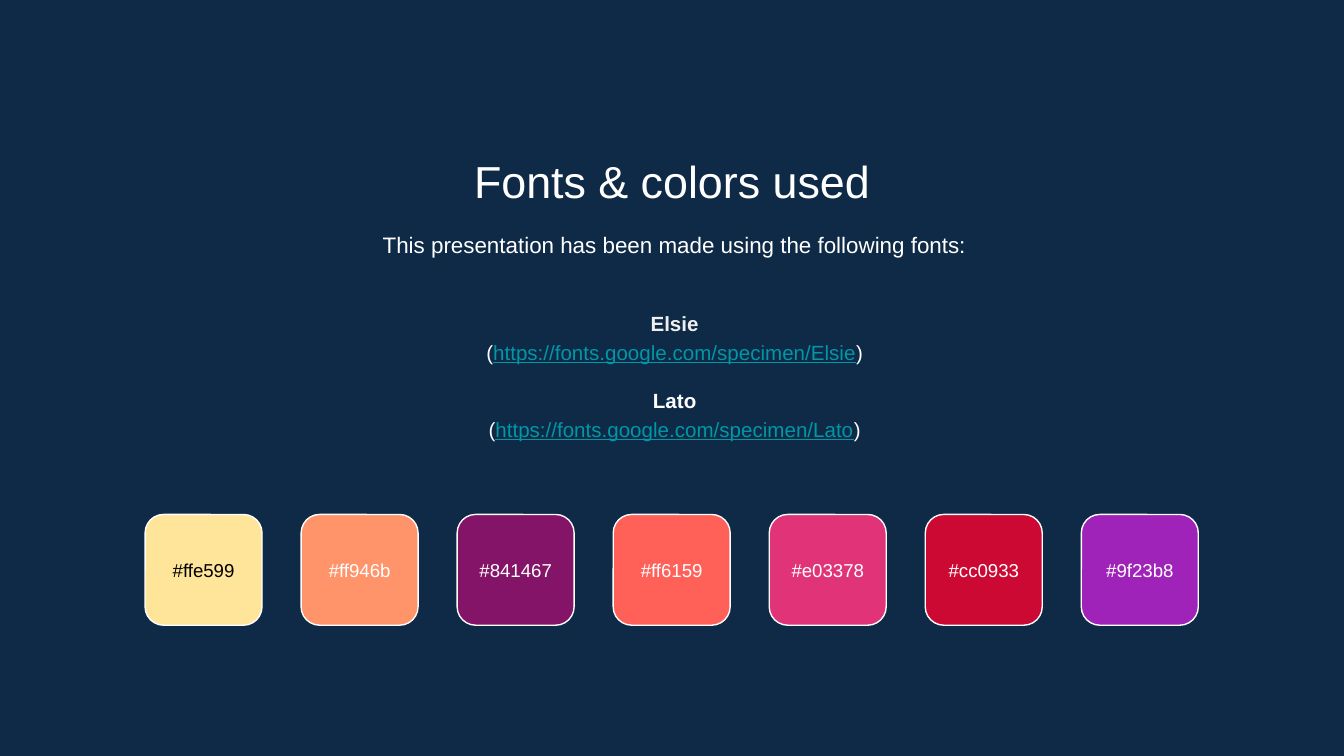
from pptx import Presentation
from pptx.dml.color import RGBColor
from pptx.enum.shapes import MSO_SHAPE as Shape
from pptx.enum.text import MSO_ANCHOR as Anchor, PP_ALIGN as Align
from pptx.util import Inches, Pt

NAVY = RGBColor(0x0E, 0x2A, 0x47)
WHITE = RGBColor(0xFF, 0xFF, 0xFF)
BLACK = RGBColor(0x00, 0x00, 0x00)
LIGHT_GRAY = RGBColor(0xEF, 0xEF, 0xEF)
TEAL = RGBColor(0x00, 0x97, 0xA7)
YELLOW = RGBColor(0xFF, 0xE5, 0x99)
ORANGE = RGBColor(0xFF, 0x94, 0x6B)
PLUM = RGBColor(0x84, 0x14, 0x67)
CORAL = RGBColor(0xFF, 0x61, 0x59)
PINK = RGBColor(0xE0, 0x33, 0x78)
CRIMSON = RGBColor(0xCC, 0x09, 0x33)
VIOLET = RGBColor(0x9F, 0x23, 0xB8)

PALETTE = [YELLOW, ORANGE, PLUM, CORAL, PINK, CRIMSON, VIOLET]
FONTS = [("Elsie", LIGHT_GRAY), ("Lato", WHITE)]


class FontsAndColorsSlide:
    """Draws styled elements on a slide divided into 100 columns and 100 rows."""

    font_name = "Arial"
    inset = Inches(0.1)

    def __init__(self, presentation):
        self.column = presentation.slide_width / 100
        self.row = presentation.slide_height / 100
        self.slide = presentation.slides.add_slide(presentation.slide_layouts[6])
        self.slide.background.fill.solid()
        self.slide.background.fill.fore_color.rgb = NAVY

    def place(self, left, top, width, height):
        return (round(left * self.column), round(top * self.row),
                round(width * self.column), round(height * self.row))

    def format_font(self, font, size, color, bold=False, underline=False):
        font.name = self.font_name
        font.size = Pt(size)
        font.color.rgb = color
        font.bold = bold
        font.underline = underline

    def text_box(self, *area, anchor=Anchor.TOP):
        text_frame = self.slide.shapes.add_textbox(*self.place(*area)).text_frame
        text_frame.word_wrap = True
        text_frame.vertical_anchor = anchor
        text_frame.margin_left = text_frame.margin_right = self.inset
        text_frame.margin_top = text_frame.margin_bottom = self.inset
        return text_frame

    def line(self, text, size, *area, spacing=1.0):
        text_frame = self.text_box(*area)
        text_frame.text = text
        paragraph = text_frame.paragraphs[0]
        paragraph.alignment = Align.CENTER
        paragraph.line_spacing = spacing
        self.format_font(paragraph.runs[0].font, size, WHITE)

    def font_list(self, fonts, size, gap, *area):
        text_frame = self.text_box(*area, anchor=Anchor.MIDDLE)
        for index, (name, color) in enumerate(fonts):
            heading = text_frame.add_paragraph() if index else text_frame.paragraphs[0]
            heading.text = name
            self.format_font(heading.runs[0].font, size, color, bold=True)
            if index:
                heading.space_before = Pt(gap)
            address = text_frame.add_paragraph()
            link = f"https://fonts.google.com/specimen/{name}"
            for text, tint in (("(", WHITE), (link, TEAL), (")", WHITE)):
                run = address.add_run()
                run.text = text
                self.format_font(run.font, size, tint, underline=text == link)
        for paragraph in text_frame.paragraphs:
            paragraph.alignment = Align.CENTER
            paragraph.line_spacing = 1.15

    def swatch(self, color, *area):
        shape = self.slide.shapes.add_shape(Shape.ROUNDED_RECTANGLE, *self.place(*area))
        shape.shadow.inherit = False
        shape.fill.solid()
        shape.fill.fore_color.rgb = color
        shape.line.color.rgb = WHITE
        shape.line.width = Pt(0.75)
        text_frame = shape.text_frame
        text_frame.margin_left = text_frame.margin_right = 0
        text_frame.vertical_anchor = Anchor.MIDDLE
        text_frame.text = f"#{color}".lower()
        paragraph = text_frame.paragraphs[0]
        paragraph.alignment = Align.CENTER
        self.format_font(paragraph.runs[0].font, 10, BLACK if color == YELLOW else WHITE)

    def swatch_row(self, colors, left, top, width, height, pitch):
        for index, color in enumerate(colors):
            self.swatch(color, left + index * pitch, top, width, height)


def main():
    presentation = Presentation()
    presentation.slide_width = Inches(10)
    presentation.slide_height = presentation.slide_width * 9 // 16
    page = FontsAndColorsSlide(presentation)
    page.line("Fonts & colors used", 24, 11.45, 18.55, 77.1, 9.4)
    page.line("This presentation has been made using the following fonts:", 12,
              11.65, 28.3, 77.1, 8.5, spacing=1.15)
    page.font_list(FONTS, 11, 11, 11.65, 37.35, 77.1, 24.4)
    page.swatch_row(PALETTE, 10.8, 68.05, 8.7, 14.65, pitch=11.61)
    presentation.save("out.pptx")


if __name__ == "__main__":
    main()
